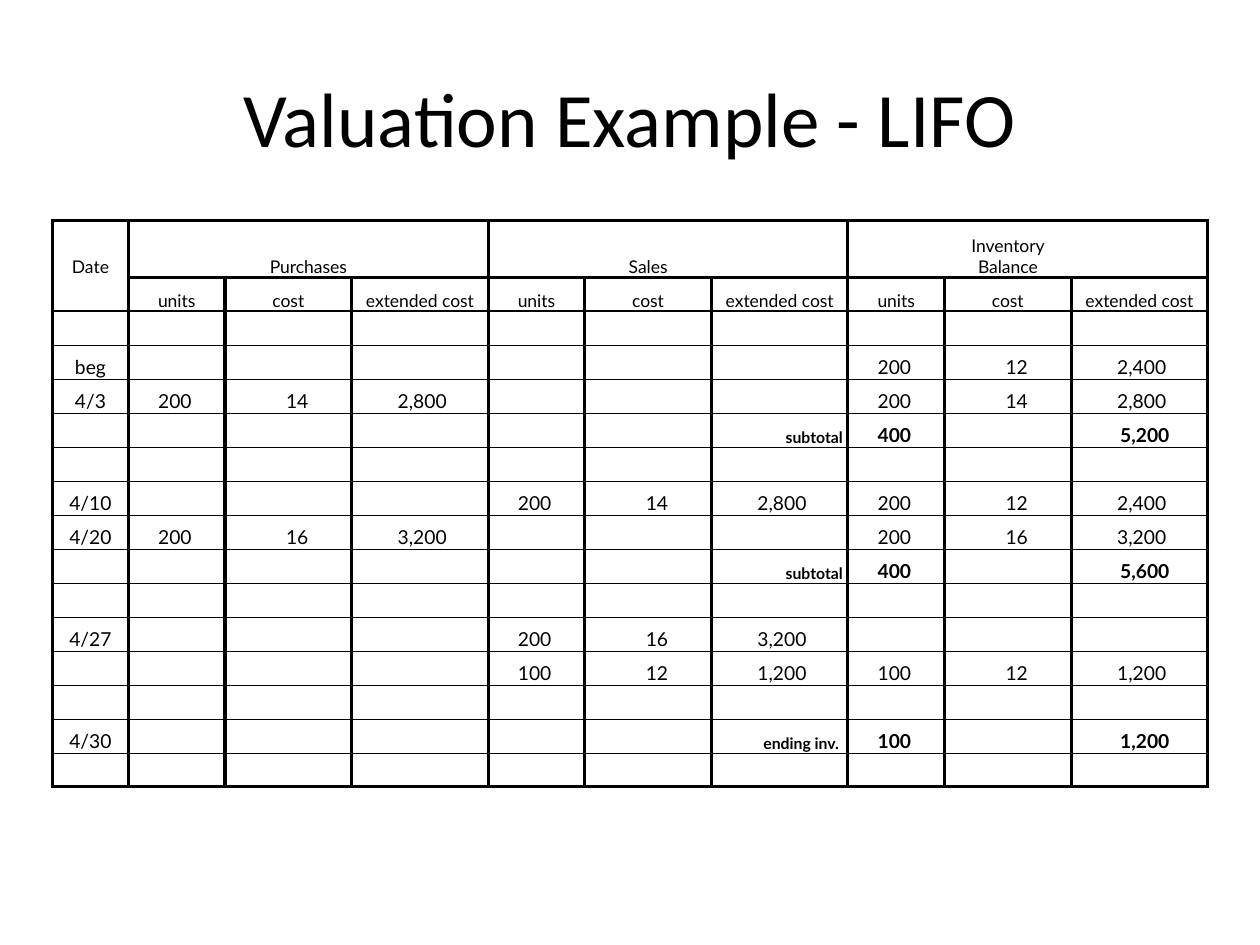
from lxml.etree import SubElement
from pptx import Presentation
from pptx.dml.color import RGBColor
from pptx.enum.text import MSO_ANCHOR, PP_ALIGN
from pptx.oxml.ns import qn
from pptx.util import Pt

BLACK = RGBColor(0, 0, 0)
THICK, MEDIUM, THIN = 2, 1, 0.5

DATE_WIDTH = 43.4
GROUP_WIDTHS = [55.2, 72.4, 78]
HEADER_HEIGHT, ROW_HEIGHT = 32.4, 19.44
HEADINGS = ["units", "cost", "extended cost"]
NONE = ["", "", ""]
BLANK = ["", *NONE, *NONE, *NONE]


def total(label, units, extended, date=""):
    return [date, *NONE, "", "", label, units, "", extended]


OPENING = ["200", "12", "2,400"]
APRIL_3 = ["200", "14", "2,800"]
APRIL_20 = ["200", "16", "3,200"]
REMAINING = ["100", "12", "1,200"]

LEDGER = [
    ["Date", "Purchases", "", "", "", "Sales", "", "", "Inventory Balance", ""],
    ["", *HEADINGS, *HEADINGS, *HEADINGS],
    BLANK,
    ["beg", *NONE, *NONE, *OPENING],
    ["4/3", *APRIL_3, *NONE, *APRIL_3],
    total("subtotal", "400", "5,200"),
    BLANK,
    ["4/10", *NONE, *APRIL_3, *OPENING],
    ["4/20", *APRIL_20, *NONE, *APRIL_20],
    total("subtotal", "400", "5,600"),
    BLANK,
    ["4/27", *NONE, *APRIL_20, *NONE],
    ["", *NONE, *REMAINING, *REMAINING],
    BLANK,
    total("ending inv.", "100", "1,200", "4/30"),
    BLANK,
]
LAST_ROW = len(LEDGER) - 1


def cell_format(row, column, text):
    style = {"size": 11, "bold": False, "align": PP_ALIGN.LEFT, "left": 0.72, "right": 0.72}
    if row < 2:
        style.update(size=10, align=PP_ALIGN.CENTER)
    elif column == 0:
        style.update(align=PP_ALIGN.CENTER)
    elif text in ("subtotal", "ending inv."):
        right = 3 if text == "subtotal" else 5.2
        style.update(size=9, bold=True, align=PP_ALIGN.RIGHT, right=right)
    else:
        bold = LEDGER[row][6] in ("subtotal", "ending inv.")
        indents = [17, 34.9, 28 if bold else 26.3]
        style.update(bold=bold, left=indents[(column - 1) % 3])
    return style


def line_width(line):
    return {0: THICK, 1: THICK, 2: MEDIUM, LAST_ROW + 1: THICK}.get(line, THIN)


def cell_borders(row, column):
    borders = {"L": THICK, "R": THICK, "T": line_width(row), "B": line_width(row + 1)}
    if column == 0 and row < 2:
        borders["B" if row == 0 else "T"] = 0
    if row == 0 and column > 3:
        position = (column - 1) % 3
        if position > 0:
            borders["L"] = 0
        if position < 2:
            borders["R"] = 0
    return borders


class LedgerSlide:
    def __init__(self, deck, title_font, table_font):
        self.page = deck.slides.add_slide(deck.slide_layouts[6])
        self.title_font = title_font
        self.table_font = table_font

    def add_text(self, para, text, align, **values):
        para.alignment = align
        span = para.add_run()
        span.text = text
        for name, value in values.items():
            setattr(span.font, name, value)
        span.font.color.rgb = BLACK

    def add_title(self, text, left, top, width, height):
        box = self.page.shapes.add_textbox(Pt(left), Pt(top), Pt(width), Pt(height))
        frame = box.text_frame
        frame.word_wrap = True
        frame.vertical_anchor = MSO_ANCHOR.MIDDLE
        self.add_text(frame.paragraphs[0], text, PP_ALIGN.CENTER,
                      size=Pt(44), name=self.title_font)

    def draw_borders(self, cell, widths):
        properties = cell._tc.get_or_add_tcPr()
        for side, width in widths.items():
            line = SubElement(properties, qn(f"a:ln{side}"), w=str(int(Pt(width))))
            if width:
                fill = SubElement(line, qn("a:solidFill"))
                SubElement(fill, qn("a:srgbClr"), val=str(BLACK))
            else:
                SubElement(line, qn("a:noFill"))

    def fill_cell(self, cell, row, column, text):
        style = cell_format(row, column, text)
        layout = {
            "vertical_anchor": MSO_ANCHOR.BOTTOM,
            "margin_left": Pt(style["left"]),
            "margin_right": Pt(style["right"]),
            "margin_top": Pt(0.72),
            "margin_bottom": 0,
        }
        for name, value in layout.items():
            setattr(cell, name, value)
        self.draw_borders(cell, cell_borders(row, column))
        cell.fill.background()
        para = cell.text_frame.paragraphs[0]
        if text:
            self.add_text(para, text, style["align"], size=Pt(style["size"]),
                          bold=style["bold"], name=self.table_font)
        else:
            SubElement(para._p, qn("a:endParaRPr"), sz=str(style["size"] * 100))

    def add_ledger(self, rows, left, top):
        widths = [DATE_WIDTH] + GROUP_WIDTHS * 3
        heights = [HEADER_HEIGHT] + [ROW_HEIGHT] * LAST_ROW
        table = self.page.shapes.add_table(
            len(rows), len(widths), Pt(left), Pt(top), Pt(sum(widths)), Pt(sum(heights))
        ).table
        table.first_row = table.horz_banding = False
        for column, width in zip(table.columns, widths):
            column.width = Pt(width)
        for row, height in zip(table.rows, heights):
            row.height = Pt(height)
        for row, texts in enumerate(rows):
            for column, text in enumerate(texts):
                self.fill_cell(table.cell(row, column), row, column, text)
        table.cell(0, 1).merge(table.cell(0, 3))


def main():
    deck = Presentation()
    deck.slide_width, deck.slide_height = Pt(720), Pt(540)
    slide = LedgerSlide(deck, "Calibri", "Lato")
    slide.add_title("Valuation Example - LIFO", 36, 21.6, 648, 90)
    slide.add_ledger(LEDGER, 30, 126)
    deck.save("out.pptx")


if __name__ == "__main__":
    main()
